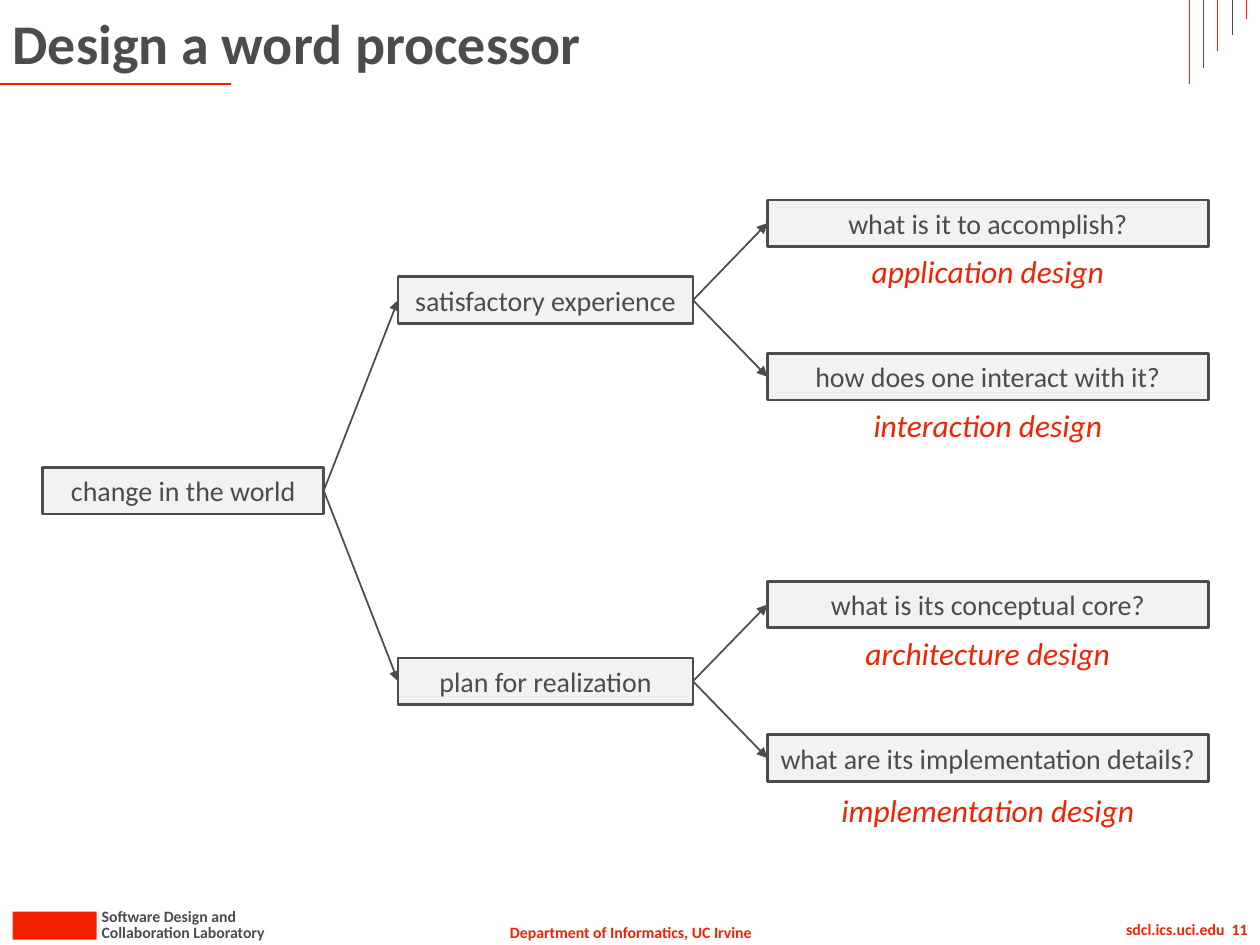
from lxml.etree import SubElement
from pptx import Presentation
from pptx.dml.color import RGBColor
from pptx.enum.shapes import MSO_CONNECTOR as CONN, MSO_SHAPE as SHAPE
from pptx.enum.text import MSO_ANCHOR as ANCHOR, PP_ALIGN as ALIGN
from pptx.oxml.ns import qn
from pptx.util import Pt

rgb = RGBColor.from_string
RED, GRAY, PALE = "F32200", "4C4C4C", "F2F2F2"
BOX_H = 26.6
RIGHT_SITE, LEFT_SITE = 3, 1


def write(s, text, size, color, align=ALIGN.LEFT, bold=False, italic=False, wrap=True):
    tf = s.text_frame
    tf.word_wrap = wrap
    p = tf.paragraphs[0]
    p.text = text
    p.alignment = align
    f = p.font
    f.name, f.size, f.bold, f.italic = "Calibri", Pt(size), bold, italic
    f.color.rgb = rgb(color)


def add_line(x1, y1, x2, y2, color, width):
    """Add a straight line without a shadow."""
    s = slide.shapes.add_connector(CONN.STRAIGHT, Pt(x1), Pt(y1), Pt(x2), Pt(y2))
    s.line.color.rgb = rgb(color)
    s.line.width = Pt(width)
    SubElement(s._element.spPr, qn("a:effectLst"))
    return s


prs = Presentation()
prs.slide_width, prs.slide_height = Pt(720), Pt(540)
slide = prs.slides.add_slide(prs.slide_layouts[5])

# Title and header decoration
title = slide.shapes.title
title.left, title.top, title.width, title.height = Pt(0), Pt(0), Pt(648), Pt(48)
title.text_frame.vertical_anchor = ANCHOR.MIDDLE
write(title, "Design a word processor", 32, GRAY, bold=True)
add_line(0, 48, 132, 48, RED, 1.5)
for i in range(5):
    x = 679.7 + 8.1 * i
    add_line(x, 48 - 9.3 * i, x, 0, GRAY if i % 2 else RED, 0.5)

# Footer
block = slide.shapes.add_shape(SHAPE.RECTANGLE, Pt(7.2), Pt(521), Pt(48), Pt(16))
block.shadow.inherit = False
block.fill.solid()
block.fill.fore_color.rgb = rgb(RED)
block.line.fill.background()
footer = [
    ("Department of Informatics, UC Irvine", 283, 523.5, 154.8, RED, ALIGN.CENTER),
    ("Software Design and", 51, 514.8, 92.9, GRAY, ALIGN.LEFT),
    ("Collaboration Laboratory", 51, 523.5, 110.2, GRAY, ALIGN.LEFT),
    ("sdcl.ics.uci.edu  11", 564.5, 522, 155.5, RED, ALIGN.RIGHT),
]
for text, x, y, w, color, align in footer:
    s = slide.shapes.add_textbox(Pt(x), Pt(y), Pt(w), Pt(18))
    write(s, text, 9, color, align, bold=True, wrap=align == ALIGN.RIGHT)

# Tree: columns as (left, width), nodes as (text, column, centre y, parent)
columns = [(24.5, 160.5), (227.5, 168.5), (438.5, 252)]
nodes = [
    ("change in the world", 0, 280.4, None),
    ("satisfactory experience", 1, 171.5, 0),
    ("plan for realization", 1, 389.3, 0),
    ("what is it to accomplish?", 2, 127.5, 1),
    ("how does one interact with it?", 2, 215.3, 1),
    ("what is its conceptual core?", 2, 345.5, 2),
    ("what are its implementation details?", 2, 433.2, 2),
]
boxes = []
for text, column, y, parent in nodes:
    x, w = columns[column]
    s = slide.shapes.add_shape(SHAPE.RECTANGLE, Pt(x), Pt(y - BOX_H / 2), Pt(w), Pt(BOX_H))
    s.shadow.inherit = False
    s.fill.solid()
    s.fill.fore_color.rgb = rgb(PALE)
    s.line.color.rgb = rgb(GRAY)
    s.line.width = Pt(1.5)
    s.text_frame.vertical_anchor = ANCHOR.MIDDLE
    write(s, text, 16, GRAY, ALIGN.CENTER)
    boxes.append(s)
    if parent is not None:
        arrow = add_line(0, 0, 0, 0, GRAY, 1)
        arrow.begin_connect(boxes[parent], RIGHT_SITE)
        arrow.end_connect(s, LEFT_SITE)
        SubElement(arrow.line._get_or_add_ln(), qn("a:tailEnd"), type="triangle")

# Kind of design under each leaf
leaf_x, leaf_w = columns[2]
labels = [
    ("application design", 140.4, 148.3),
    ("interaction design", 228.4, 146.9),
    ("architecture design", 358.6, 156.2),
    ("implementation design", 448.6, 185.8),
]
for text, y, w in labels:
    s = slide.shapes.add_textbox(Pt(leaf_x + (leaf_w - w) / 2), Pt(y), Pt(w), Pt(28.8))
    write(s, text, 18, RED, ALIGN.CENTER, italic=True, wrap=False)

prs.save("out.pptx")
